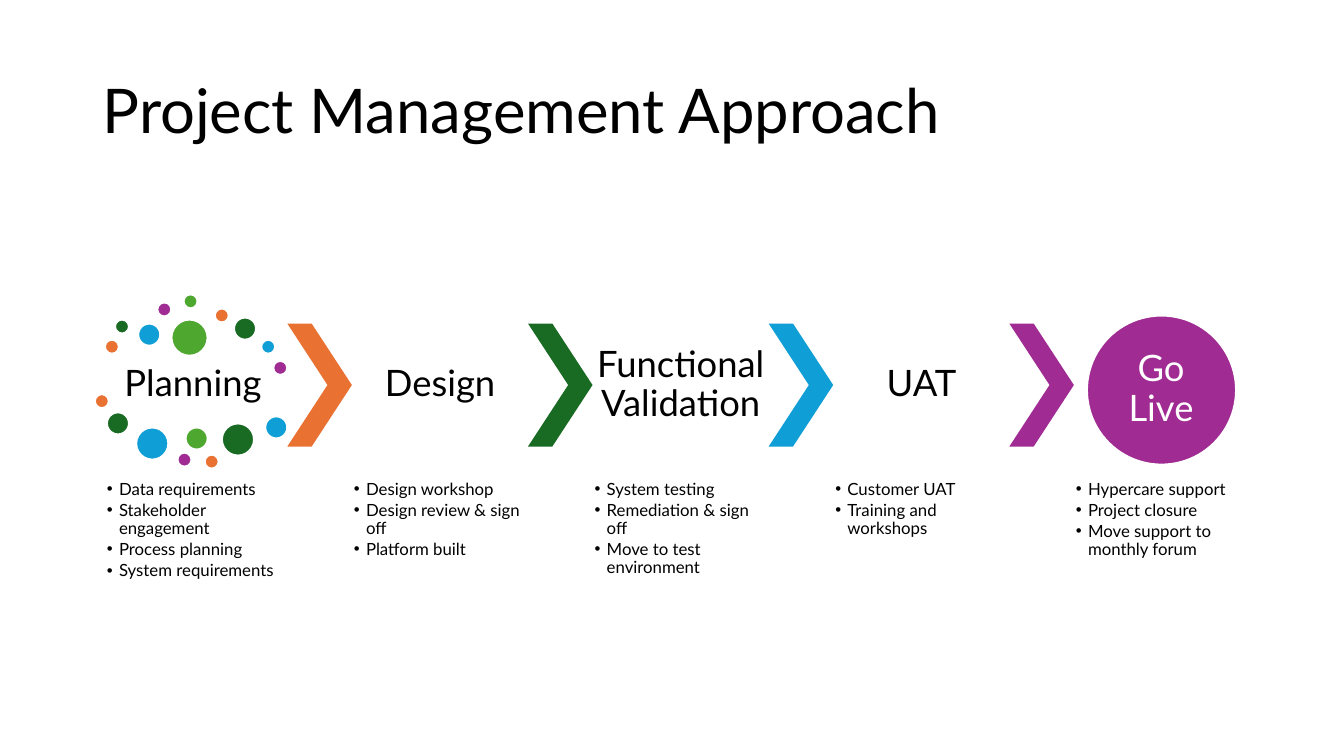
from itertools import cycle

from lxml.etree import SubElement
from pptx import Presentation
from pptx.dml.color import RGBColor
from pptx.enum.shapes import MSO_SHAPE as SHAPE
from pptx.enum.text import MSO_ANCHOR as ANCHOR, PP_ALIGN as ALIGN
from pptx.oxml.ns import qn
from pptx.util import Inches, Pt

COLORS = {
    "orange": "E97132",
    "forest": "196B24",
    "blue": "0F9ED5",
    "purple": "A02B93",
    "green": "4EA72E",
    "black": "000000",
    "white": "FFFFFF",
}
ACCENTS = ["orange", "forest", "blue", "purple", "green"]
FONT = "Lato"

PHASES = [
    ("Planning", ["Data requirements", "Stakeholder engagement",
                  "Process planning", "System requirements"]),
    ("Design", ["Design workshop", "Design review & sign off", "Platform built"]),
    ("Functional Validation", ["System testing", "Remediation & sign off",
                               "Move to test environment"]),
    ("UAT", ["Customer UAT", "Training and workshops"]),
    ("Go Live", ["Hypercare support", "Project closure",
                 "Move support to monthly forum"]),
]
PLANNING_LEFT = 1.04
DESIGN_LEFT = 3.49
PHASE_STEP = 2.387
PHASE_WIDTH = 1.75
PHASE_TOP, PHASE_HEIGHT = 3.21, 1.22
CHEVRON_WIDTH = 0.64

DOTS = [
    (1.04, 3.37, 0.14), (1.14, 3.17, 0.14), (1.37, 3.21, 0.22),
    (1.56, 3.00, 0.14), (1.82, 2.92, 0.14), (2.13, 3.06, 0.14),
    (2.32, 3.15, 0.22), (2.59, 3.37, 0.14), (2.71, 3.58, 0.14),
    (1.70, 3.17, 0.36), (0.94, 3.91, 0.14), (1.06, 4.09, 0.22),
    (1.35, 4.24, 0.32), (1.76, 4.49, 0.14), (1.84, 4.24, 0.22),
    (2.03, 4.51, 0.14), (2.20, 4.20, 0.32), (2.63, 4.13, 0.22),
]


def rgb(name):
    return RGBColor.from_string(COLORS[name])


def add_text(s, box, lines, size, color="black", inset=0.04,
             anchor=ANCHOR.MIDDLE, align=ALIGN.CENTER):
    tf = s.shapes.add_textbox(*map(Inches, box)).text_frame
    tf.word_wrap = True
    tf.vertical_anchor = anchor
    tf.margin_left = tf.margin_right = Inches(inset)
    tf.margin_top = tf.margin_bottom = Inches(inset)
    tf.text = "\n".join(lines)
    for p in tf.paragraphs:
        p.alignment = align
        p.line_spacing = 0.9
        font = p.runs[0].font
        font.name = FONT
        font.size = Pt(size)
        font.color.rgb = rgb(color)
    return tf


def add_bullets(s, left, items):
    tf = add_text(s, (left, 4.75, PHASE_WIDTH, 1.08), items, 12,
                  inset=0.02, anchor=ANCHOR.TOP, align=ALIGN.LEFT)
    for p in tf.paragraphs:
        p.space_after = Pt(2.1)
        pPr = p._p.get_or_add_pPr()
        pPr.set("marL", str(Inches(0.12)))
        pPr.set("indent", str(Inches(-0.12)))
        SubElement(pPr, qn("a:buFont")).set("typeface", "Arial")
        SubElement(pPr, qn("a:buChar")).set("char", "•")


def add_filled(s, kind, box, color):
    sp = s.shapes.add_shape(kind, *map(Inches, box))
    sp.shadow.inherit = False
    sp.fill.solid()
    sp.fill.fore_color.rgb = rgb(color)
    sp.line.fill.background()
    return sp


def add_circle(s, left, top, diameter, color):
    sp = add_filled(s, SHAPE.OVAL, (left, top, diameter, diameter), color)
    sp.line.color.rgb = rgb("white")
    sp.line.width = Pt(1.5)


def add_chevron(s, left, color):
    box = (left, PHASE_TOP, CHEVRON_WIDTH, PHASE_HEIGHT)
    add_filled(s, SHAPE.CHEVRON, box, color).adjustments[0] = 0.623


def main():
    prs = Presentation()
    prs.slide_width, prs.slide_height = Inches(13.33), Inches(7.5)
    s = prs.slides.add_slide(prs.slide_layouts[6])

    add_text(s, (0.92, 0.4, 11.5, 1.45), ["Project Management Approach"], 44,
             inset=0.1, align=ALIGN.LEFT)

    for dot, color in zip(DOTS, cycle(ACCENTS)):
        add_circle(s, *dot, color)

    last = len(PHASES) - 1
    for i, (name, items) in enumerate(PHASES):
        left = DESIGN_LEFT + (i - 1) * PHASE_STEP if i else PLANNING_LEFT
        if i:
            add_chevron(s, left - CHEVRON_WIDTH, ACCENTS[i - 1])
        if i == last:
            add_circle(s, 10.78, 3.13, 1.48, "purple")
            add_text(s, (10.99, 3.34, 1.05, 1.05), [name], 26, "white", inset=0)
        else:
            add_text(s, (left, PHASE_TOP, PHASE_WIDTH, PHASE_HEIGHT), [name], 26)
        add_bullets(s, left, items)

    prs.save("out.pptx")


if __name__ == "__main__":
    main()
